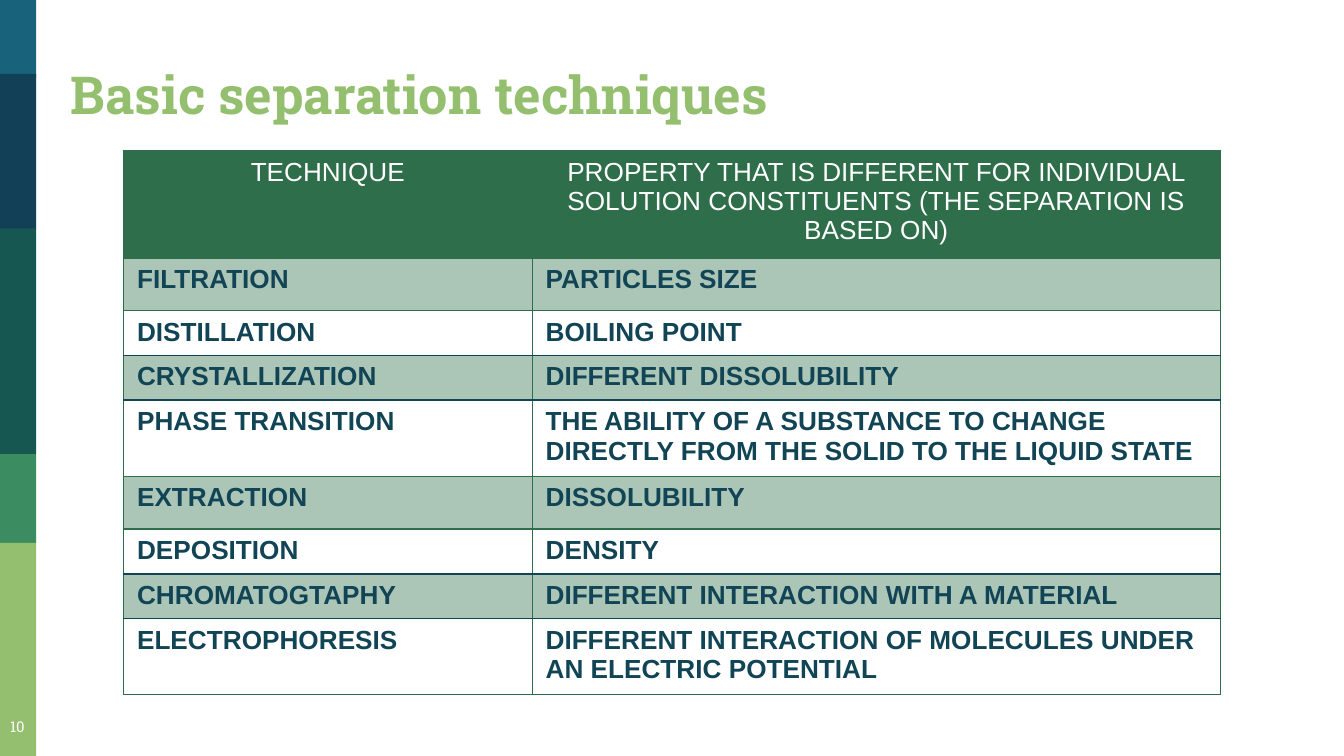
"""Build the slide listing basic separation techniques."""
from copy import deepcopy
from dataclasses import dataclass

from lxml.etree import SubElement
from pptx import Presentation
from pptx.dml.color import RGBColor
from pptx.enum.shapes import MSO_SHAPE
from pptx.enum.text import MSO_ANCHOR, PP_ALIGN
from pptx.oxml.ns import qn
from pptx.slide import Slide
from pptx.table import _Cell
from pptx.text.text import TextFrame
from pptx.util import Inches, Pt


@dataclass(frozen=True)
class Theme:
    green: str = "2E6E4B"
    navy: str = "114454"
    lime: str = "94BF6E"
    white: str = "FFFFFF"
    slab: str = "Roboto Slab"
    sans: str = "Arial"
    title: int = 28
    body: int = 14
    small: int = 8
    tint: int = 40
    thin: float = 0.75
    thick: float = 1


@dataclass(frozen=True)
class Band:
    top: float
    height: float
    color: str


@dataclass(frozen=True)
class Label:
    text: str
    box: tuple[float, float, float, float]
    anchor: MSO_ANCHOR
    align: PP_ALIGN
    style: dict


@dataclass(frozen=True)
class Row:
    method: str
    basis: str
    height: float
    dark: bool = False


THEME = Theme()
HEAD = {"name": THEME.sans, "size": Pt(THEME.body), "bold": False, "color": THEME.white}
BODY = HEAD | {"bold": True, "color": THEME.navy}
BAR = 0.27

BANDS = [
    Band(0, 0.58, "18637B"),
    Band(0.55, 1.16, "124057"),
    Band(1.7, 1.68, "165751"),
    Band(3.38, 0.66, "3B8D61"),
    Band(4.04, 1.59, THEME.lime),
]

LABELS = [
    Label("Basic separation techniques", (0.43, 0.25, 5.83, 0.78),
          MSO_ANCHOR.BOTTOM, PP_ALIGN.LEFT,
          {"name": THEME.slab, "size": Pt(THEME.title), "bold": True, "color": THEME.lime}),
    Label("10", (-0.06, 5.27, 0.38, 0.35), MSO_ANCHOR.TOP, PP_ALIGN.CENTER,
          {"name": THEME.slab, "size": Pt(THEME.small), "bold": False, "color": THEME.white}),
]

GRID = (0.92, 1.12, 8.15, 4.05)
COLS = (3.04, 5.12)
ROWS = [
    Row("TECHNIQUE", "PROPERTY THAT IS DIFFERENT FOR INDIVIDUAL SOLUTION "
        "CONSTITUENTS (THE SEPARATION IS BASED ON)", 0.55),
    Row("FILTRATION", "PARTICLES SIZE", 0.39),
    Row("DISTILLATION", "BOILING POINT", 0.32, True),
    Row("CRYSTALLIZATION", "DIFFERENT DISSOLUBILITY", 0.32, True),
    Row("PHASE TRANSITION", "THE ABILITY OF A SUBSTANCE TO CHANGE DIRECTLY "
        "FROM THE SOLID TO THE LIQUID STATE", 0.39),
    Row("EXTRACTION", "DISSOLUBILITY", 0.39),
    Row("DEPOSITION", "DENSITY", 0.32, True),
    Row("CHROMATOGTAPHY", "DIFFERENT INTERACTION WITH A MATERIAL", 0.32, True),
    Row("ELECTROPHORESIS", "DIFFERENT INTERACTION OF MOLECULES UNDER "
        "AN ELECTRIC POTENTIAL", 0.55),
]


def write(frame: TextFrame, text: str, align: PP_ALIGN, style: dict) -> None:
    para = frame.paragraphs[0]
    para.alignment = align
    run = para.add_run()
    run.text = text
    for key, value in style.items():
        if key == "color":
            run.font.color.rgb = RGBColor.from_string(value)
        else:
            setattr(run.font, key, value)
    props = run._r.get_or_add_rPr()
    for script in ("ea", "cs"):
        SubElement(props, qn(f"a:{script}"), typeface=style["name"])
    end = SubElement(para._p, qn("a:endParaRPr"), dict(props.attrib))
    end.extend(deepcopy(list(props)))


def draw_band(slide: Slide, band: Band) -> None:
    shape = slide.shapes.add_shape(
        MSO_SHAPE.RECTANGLE, 0, Inches(band.top), Inches(BAR), Inches(band.height))
    shape.shadow.inherit = False
    shape.fill.solid()
    shape.fill.fore_color.rgb = RGBColor.from_string(band.color)
    shape.line.fill.background()


def draw_label(slide: Slide, label: Label) -> None:
    frame = slide.shapes.add_textbox(*map(Inches, label.box)).text_frame
    pad = Inches(0.1)
    form = {"word_wrap": True, "vertical_anchor": label.anchor, "margin_left": pad,
            "margin_right": pad, "margin_top": pad, "margin_bottom": pad}
    for key, value in form.items():
        setattr(frame, key, value)
    write(frame, label.text, label.align, label.style)


def draw_edge(cell: _Cell, side: str, dark: bool) -> None:
    width = Pt(THEME.thick if dark else THEME.thin)
    line = SubElement(cell._tc.get_or_add_tcPr(), qn(f"a:ln{side}"), w=str(width))
    fill = SubElement(line, qn("a:solidFill"))
    SubElement(fill, qn("a:srgbClr"), val=THEME.navy if dark else THEME.green)


def fill_cell(cell: _Cell, index: int) -> None:
    if index and index % 2 == 0:
        cell.fill.background()
        return
    cell.fill.solid()
    cell.fill.fore_color.rgb = RGBColor.from_string(THEME.green)
    if index:
        color = cell._tc.tcPr.find(f"{qn('a:solidFill')}/{qn('a:srgbClr')}")
        SubElement(color, qn("a:alpha"), val=str(THEME.tint * 1000))


def draw_table(slide: Slide, rows: list[Row]) -> None:
    frame = slide.shapes.add_table(len(rows), len(COLS), *map(Inches, GRID))
    table = frame.table
    table.first_row = table.horz_banding = False
    for column, width in zip(table.columns, COLS):
        column.width = Inches(width)
    for index, row in enumerate(rows):
        table.rows[index].height = Inches(row.height)
        above = index > 0 and rows[index - 1].dark
        edges = {"L": False, "R": False, "T": above, "B": row.dark}
        align, style = (PP_ALIGN.LEFT, BODY) if index else (PP_ALIGN.CENTER, HEAD)
        for place, text in enumerate((row.method, row.basis)):
            cell = table.cell(index, place)
            write(cell.text_frame, text, align, style)
            for side, dark in edges.items():
                draw_edge(cell, side, dark)
            fill_cell(cell, index)
    frame.width, frame.height = map(Inches, GRID[2:])


def main() -> None:
    deck = Presentation()
    deck.slide_width = Inches(10)
    deck.slide_height = Inches(10 * 9 / 16)
    slide = deck.slides.add_slide(deck.slide_layouts[6])
    for band in BANDS:
        draw_band(slide, band)
    for label in LABELS:
        draw_label(slide, label)
    draw_table(slide, ROWS)
    deck.save("out.pptx")


if __name__ == "__main__":
    main()
